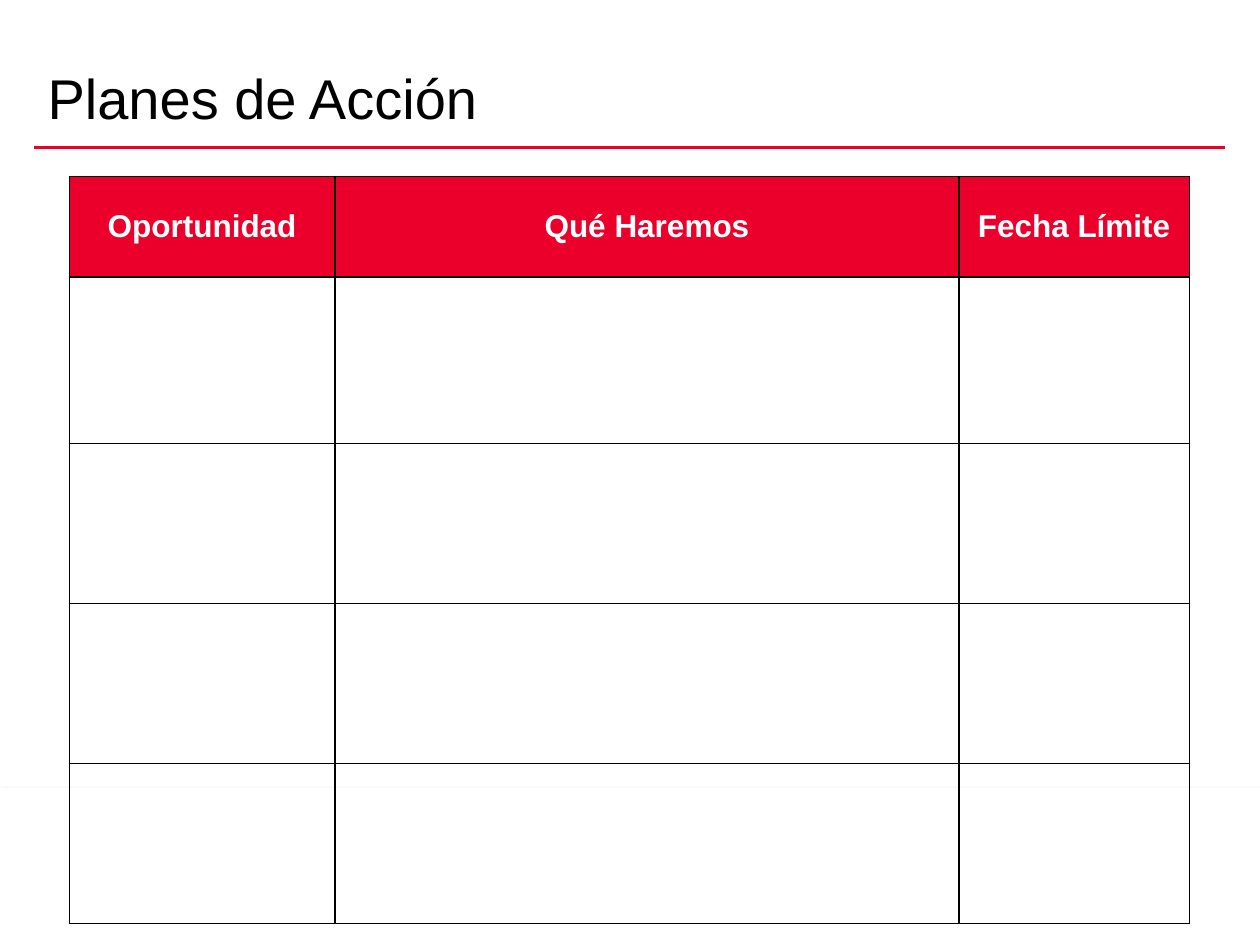
from lxml.etree import SubElement
from pptx import Presentation
from pptx.dml.color import RGBColor
from pptx.enum.shapes import MSO_CONNECTOR, MSO_SHAPE
from pptx.enum.text import MSO_ANCHOR, PP_ALIGN
from pptx.oxml.ns import qn
from pptx.util import Inches, Pt

COLORS = {"red": "EA002A", "white": "FFFFFF", "black": "000000"}
HEADS = ["Oportunidad", "Qué Haremos", "Fecha Límite"]
WIDTHS = [2.11, 4.95, 1.83]
HEIGHTS = [0.8, 1.32, 1.27, 1.27, 1.27]


def color(name):
    return RGBColor.from_string(COLORS[name])


def style(run, size, tone, bold=False):
    run.font.name = "Arial"
    run.font.size = Pt(size)
    run.font.bold = bold
    run.font.color.rgb = color(tone)


def add_footer(slide, left, top, width, height):
    band = slide.shapes.add_shape(
        MSO_SHAPE.RECTANGLE, Inches(left), Inches(top), Inches(width), Inches(height)
    )
    band.fill.solid()
    band.fill.fore_color.rgb = color("white")
    band.line.color.rgb = color("white")
    band.line.width = Pt(0.75)
    band.shadow.inherit = False
    effects = band._element.spPr.find(qn("a:effectLst"))
    shadow = SubElement(
        effects, qn("a:outerShdw"), blurRad=str(Pt(3.1)), dist=str(Pt(1.8)),
        dir="5400000", rotWithShape="0"
    )
    tint = SubElement(shadow, qn("a:srgbClr"), val=COLORS["black"])
    SubElement(tint, qn("a:alpha"), val="35000")


def add_title(slide, left, top, width, height):
    box = slide.shapes.add_textbox(Inches(left), Inches(top), Inches(width), Inches(height))
    frame = box.text_frame
    frame.word_wrap = True
    frame.vertical_anchor = MSO_ANCHOR.BOTTOM
    frame.text = "Planes de Acción"
    frame.paragraphs[0].line_spacing = 0.8
    style(frame.paragraphs[0].runs[0], 32, "black")


def add_rule(slide, left, top, width):
    rule = slide.shapes.add_connector(
        MSO_CONNECTOR.STRAIGHT, Inches(left), Inches(top), Inches(left + width), Inches(top)
    )
    rule.line.color.rgb = color("red")
    rule.line.width = Pt(2)
    SubElement(rule._element.spPr, qn("a:effectLst"))


def add_border(cell):
    props = cell._tc.get_or_add_tcPr()
    for index, side in enumerate(("a:lnL", "a:lnR", "a:lnT", "a:lnB")):
        line = props.makeelement(qn(side), {"w": str(Pt(1))})
        fill = SubElement(line, qn("a:solidFill"))
        SubElement(fill, qn("a:srgbClr"), val=COLORS["black"])
        props.insert(index, line)


def add_plan(slide, left, top, width, height):
    table = slide.shapes.add_table(
        len(HEIGHTS), len(WIDTHS), Inches(left), Inches(top), Inches(width), Inches(height)
    ).table
    table.horz_banding = False
    for column, size in zip(table.columns, WIDTHS):
        column.width = Inches(size)
    for row, size in zip(table.rows, HEIGHTS):
        row.height = Inches(size)
    for cell in table.iter_cells():
        cell.fill.background()
        add_border(cell)
    for cell, head in zip(table.rows[0].cells, HEADS):
        cell.fill.solid()
        cell.fill.fore_color.rgb = color("red")
        cell.vertical_anchor = MSO_ANCHOR.MIDDLE
        cell.text_frame.text = head
        label = cell.text_frame.paragraphs[0]
        label.alignment = PP_ALIGN.CENTER
        style(label.runs[0], 18, "white", True)


def main():
    deck = Presentation()
    deck.slide_width = Inches(10)
    deck.slide_height = Inches(7.5)
    slide = deck.slides.add_slide(deck.slide_layouts[6])
    add_footer(slide, 0, 6.26, 10, 1.24)
    add_rule(slide, 0.27, 1.17, 9.45)
    add_title(slide, 0.28, 0.05, 9, 1.03)
    add_plan(slide, 0.55, 1.4, sum(WIDTHS), sum(HEIGHTS))
    deck.save("out.pptx")


if __name__ == "__main__":
    main()
